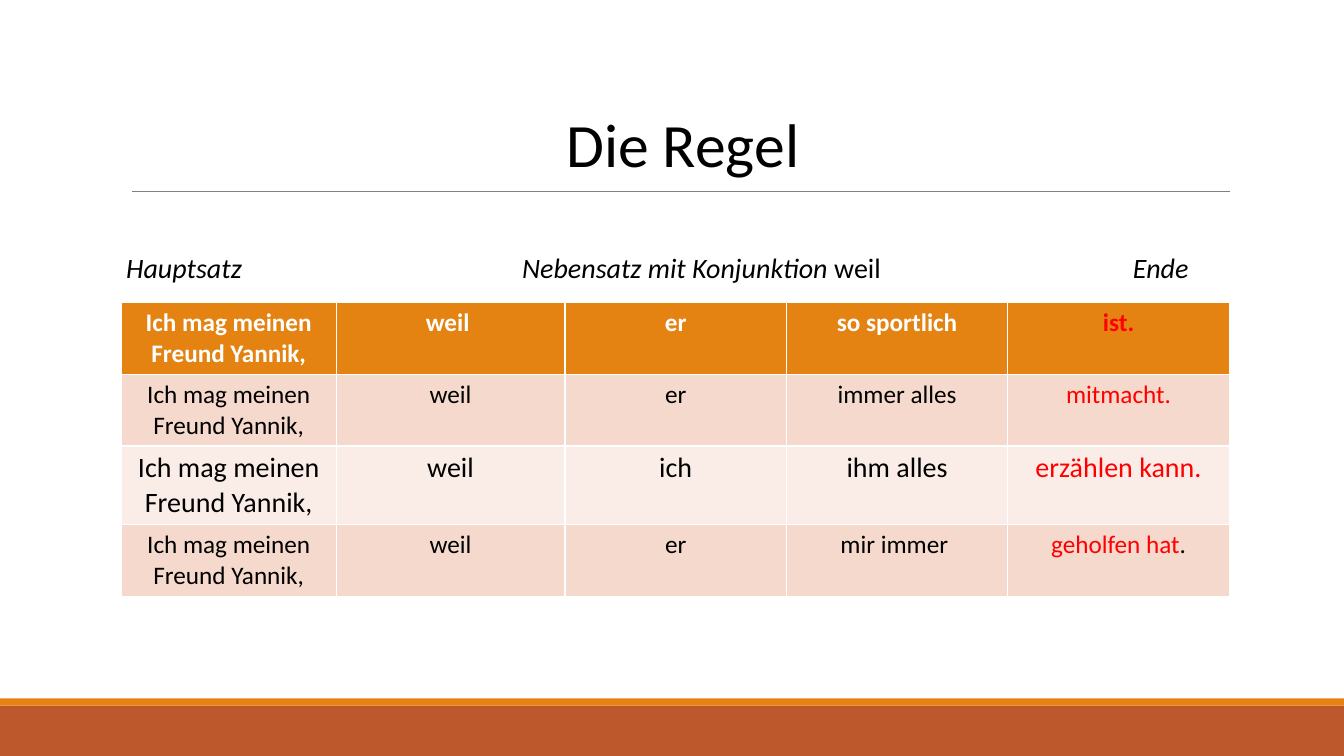
from lxml import etree
from pptx import Presentation
from pptx.dml.color import RGBColor
from pptx.enum import shapes, text
from pptx.oxml import ns
from pptx.util import Cm, Pt


def tint(code):
    return RGBColor.from_string(code)


def style(para, size, code="000000", bold=False):
    font = para.font
    font.name, font.size, font.bold = "Calibri", Pt(size), bold
    font.color.rgb = tint(code)


deck = Presentation()
deck.slide_width, deck.slide_height = Cm(33.87), Cm(19.05)
slide = deck.slides.add_slide(deck.slide_layouts[5])

for top, high, code in [(17.78, 1.27, "BD582C"), (17.6, 0.18, "E48312")]:
    bar = slide.shapes.add_shape(
        shapes.MSO_SHAPE.RECTANGLE, 0, Cm(top), deck.slide_width, Cm(high))
    bar.shadow.inherit = False
    bar.fill.solid()
    bar.fill.fore_color.rgb = tint(code)
    bar.line.fill.background()

rule = slide.shapes.add_connector(
    shapes.MSO_CONNECTOR.STRAIGHT, Cm(3.33), Cm(4.82), Cm(31), Cm(4.82))
rule.line.color.rgb = tint("808080")
rule.line.width = Pt(0.5)
etree.SubElement(rule._element.spPr, ns.qn("a:effectLst"))

title = slide.shapes.title
title.left, title.top, title.width, title.height = Cm(14.02), Cm(2.54), Cm(7.82), Cm(2.14)
title.text_frame.text = "Die Regel"
para = title.text_frame.paragraphs[0]
para.alignment = text.PP_ALIGN.LEFT
style(para, 44)

main = "Ich mag meinen Freund Yannik,"
rows = [
    (1.78, 18, "E48312", "FFFFFF", ["weil ", "er", "so sportlich", "ist."]),
    (1.78, 18, "F5D9CC", "000000", ["weil", "er", "immer alles", "mitmacht."]),
    (1.96, 20, "FAEDE7", "000000", ["weil", "ich", "ihm alles", "erzählen kann."]),
    (1.78, 18, "F5D9CC", "000000", ["weil", "er", "mir immer ", "geholfen hat"]),
]
wide = [5.41, 5.77, 5.58, 5.58, 5.58]
grid = slide.shapes.add_table(
    len(rows), len(wide), Cm(3.06), Cm(7.63), Cm(27.92), Cm(7.3)).table
for col, width in zip(grid.columns, wide):
    col.width = Cm(width)
for r, (high, size, back, ink, words) in enumerate(rows):
    grid.rows[r].height = Cm(high)
    for c, word in enumerate([main] + words):
        cell = grid.cell(r, c)
        cell.fill.solid()
        cell.fill.fore_color.rgb = tint(back)
        cell.text = word
        para = cell.text_frame.paragraphs[0]
        para.alignment = text.PP_ALIGN.CENTER
        style(para, size, "FF0000" if c == 4 else ink, r == 0)
dot = para.add_run()
dot.text = "."
dot.font.color.rgb = tint("000000")

box = slide.shapes.add_textbox(Cm(3.18), Cm(6.2), Cm(27.28), Cm(1.11))
frame = box.text_frame
frame.word_wrap = True
frame.margin_left = frame.margin_right = 0
para = frame.paragraphs[0]
tabs = etree.SubElement(para._p.get_or_add_pPr(), ns.qn("a:tabLst"))
for stop in (9.98, 25.37):
    etree.SubElement(tabs, ns.qn("a:tab"), pos=str(Cm(stop)), algn="l")
style(para, 20)
for word, slant in [("Hauptsatz\tNebensatz mit Konjunktion ", True), ("weil", False), ("\tEnde", True)]:
    run = para.add_run()
    run.text = word
    run.font.italic = slant

deck.save("out.pptx")
